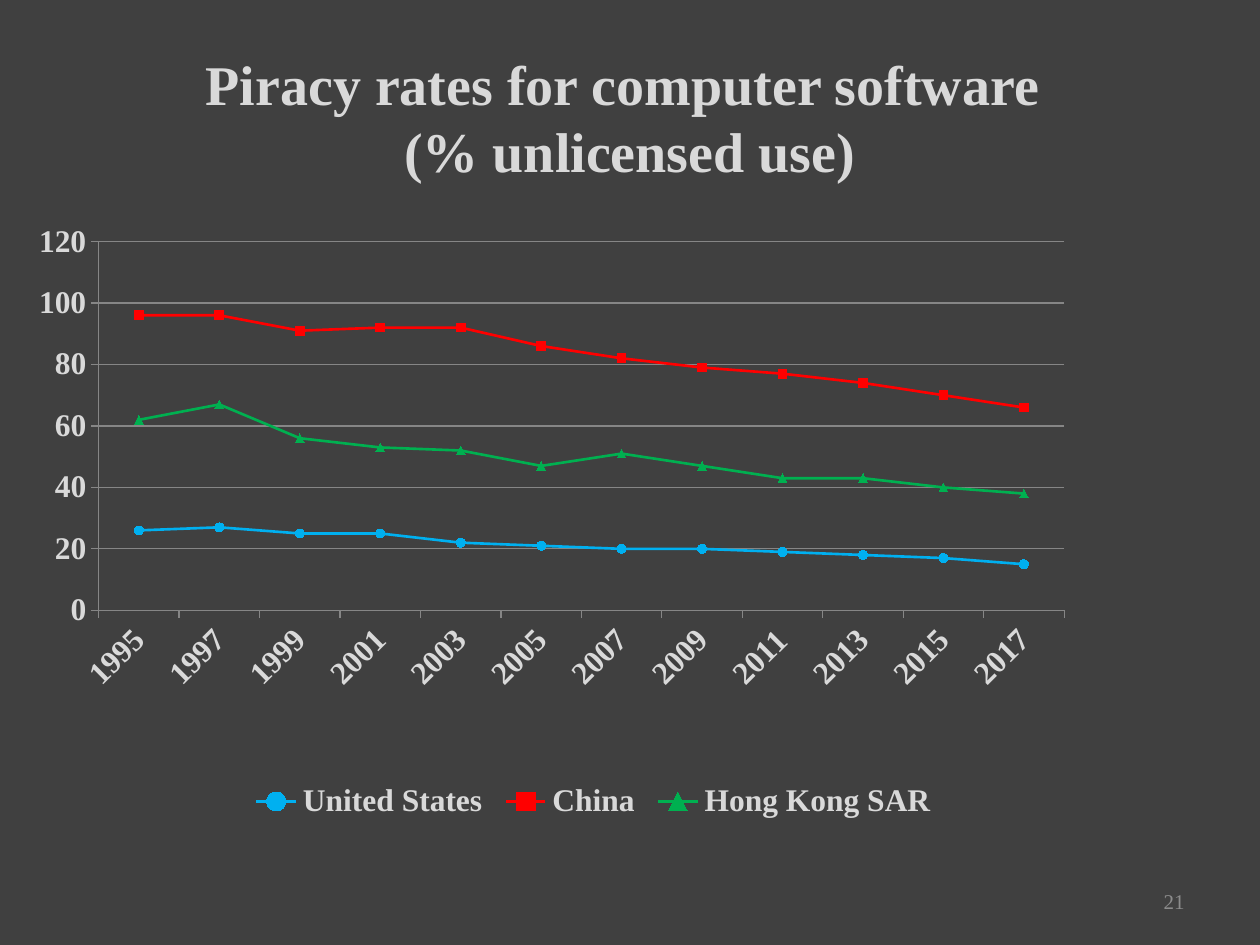
from lxml.etree import SubElement
from pptx import Presentation
from pptx.chart.data import CategoryChartData as Data
from pptx.dml.color import RGBColor
from pptx.enum.chart import XL_CHART_TYPE as Kind, XL_LEGEND_POSITION as Side
from pptx.enum.chart import XL_MARKER_STYLE as Mark, XL_TICK_MARK as Tick
from pptx.enum.text import MSO_ANCHOR as Anchor, PP_ALIGN as Align
from pptx.oxml.ns import qn
from pptx.util import Cm, Pt

FACE = "Times New Roman"
PALE = "D9D9D9"
GREY = "868686"
YEARS = [str(year) for year in range(1995, 2018, 2)]
RATES = [
    ("United States", "00B0F0", Mark.CIRCLE,
     [26, 27, 25, 25, 22, 21, 20, 20, 19, 18, 17, 15]),
    ("China", "FF0000", Mark.SQUARE,
     [96, 96, 91, 92, 92, 86, 82, 79, 77, 74, 70, 66]),
    ("Hong Kong SAR", "00B050", Mark.TRIANGLE,
     [62, 67, 56, 53, 52, 47, 51, 47, 43, 43, 40, 38]),
]


def paint(fill, tone):
    fill.solid()
    fill.fore_color.rgb = RGBColor.from_string(tone)


def style(font, size, tone, bold):
    font.name, font.size, font.bold = FACE, Pt(size), bold
    paint(font.fill, tone)


def stroke(line, tone, width):
    paint(line.fill, tone)
    line.width = Pt(width)


def add_text(slide, box, text, size, tone, align, bold=False):
    frame = slide.shapes.add_textbox(*map(Cm, box)).text_frame
    frame.word_wrap = True
    frame.vertical_anchor = Anchor.MIDDLE
    para = frame.paragraphs[0]
    para.text = text
    para.alignment = align
    style(para.font, size, tone, bold)


def place(node, index, box, inner=False):
    for old in node.findall(qn("c:layout")):
        node.remove(old)
    layout = SubElement(node, qn("c:layout"))
    node.insert(index, layout)
    manual = SubElement(layout, qn("c:manualLayout"))
    parts = [("layoutTarget", "inner")] if inner else []
    parts += [("xMode", "edge"), ("yMode", "edge"), *zip("xywh", box)]
    for tag, val in parts:
        SubElement(manual, qn("c:" + tag)).set("val", str(val))


def style_axis(axis):
    axis.major_tick_mark = Tick.OUTSIDE
    axis.minor_tick_mark = Tick.NONE
    stroke(axis.format.line, GREY, 0.75)
    style(axis.tick_labels.font, 18, PALE, True)


def add_rates(slide, box):
    data = Data()
    data.categories = YEARS
    for name, _, _, vals in RATES:
        data.add_series(name, vals)
    chart = slide.shapes.add_chart(Kind.LINE_MARKERS, *map(Cm, box), data).chart
    chart.has_title = False
    style(chart.font, 18, PALE, True)

    for series, (_, tone, mark, _) in zip(chart.plots[0].series, RATES):
        series.smooth = False
        stroke(series.format.line, tone, 1.5)
        series.marker.style, series.marker.size = mark, 5
        paint(series.marker.format.fill, tone)
        stroke(series.marker.format.line, tone, 0.75)

    years, scale = chart.category_axis, chart.value_axis
    style_axis(years)
    style_axis(scale)
    body = years._element.find(qn("c:txPr")).find(qn("a:bodyPr"))
    body.set("rot", "-2700000")
    body.set("vert", "horz")
    scale.minimum_scale, scale.maximum_scale, scale.major_unit = 0, 120, 20
    scale.has_major_gridlines = True
    stroke(scale.major_gridlines.format.line, GREY, 0.75)

    chart.has_legend = True
    key = chart.legend
    key.position = Side.BOTTOM
    key.include_in_layout = False
    style(key.font, 18, PALE, True)
    root = chart.element.find(qn("c:chart"))
    place(root.find(qn("c:plotArea")), 0, (0.09, 0.07, 0.8, 0.56), True)
    place(root.find(qn("c:legend")), 1, (0.21, 0.88, 0.58, 0.08))


def main():
    deck = Presentation()
    deck.slide_width, deck.slide_height = Cm(25.4), Cm(19.05)
    slide = deck.slides.add_slide(deck.slide_layouts[6])
    paint(slide.background.fill, "404040")
    add_text(slide, (1.27, 0.76, 22.86, 3.18),
             "Piracy rates for computer software \v(% unlicensed use)",
             32, PALE, Align.CENTER, True)
    add_rates(slide, (-0.2, 3.94, 24.33, 13.28))
    add_text(slide, (18.2, 17.66, 5.93, 1.01), "21", 12, "8C8C8C", Align.RIGHT)
    deck.save("out.pptx")


if __name__ == "__main__":
    main()
